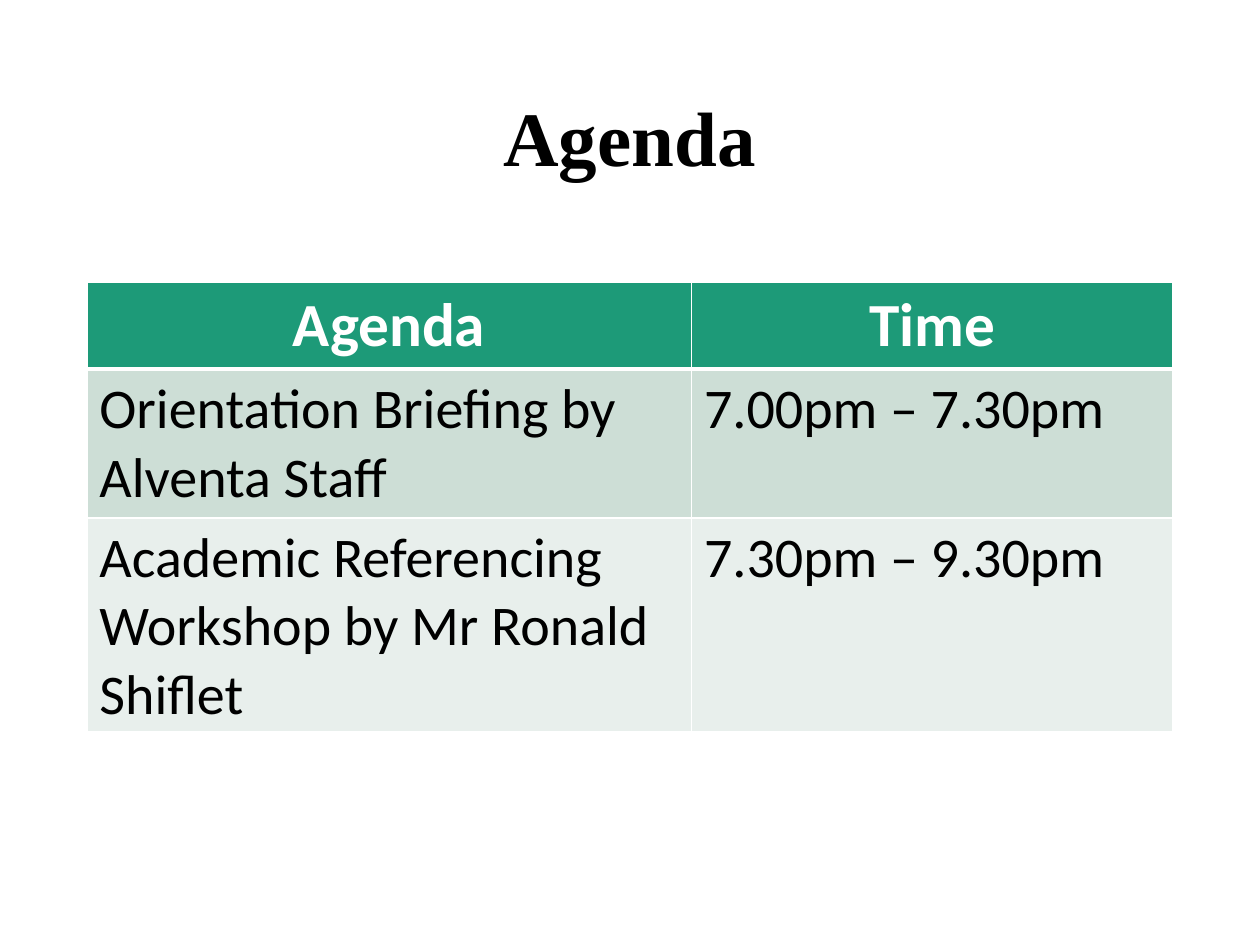
"""Build an agenda slide with a title and a timetable."""
from dataclasses import dataclass
from typing import Any

from lxml.etree import SubElement as Sub
from pptx import Presentation
from pptx.dml.color import RGBColor
from pptx.enum.text import MSO_ANCHOR as Anchor, PP_ALIGN as Align
from pptx.oxml.ns import qn
from pptx.util import Cm, Pt

BLACK = RGBColor(0x00, 0x00, 0x00)
WHITE = RGBColor(0xFF, 0xFF, 0xFF)
GREEN = RGBColor(0x1D, 0x9A, 0x78)
SAGE = RGBColor(0xCD, 0xDE, 0xD6)
MIST = RGBColor(0xE8, 0xEF, 0xEC)

TITLE = {"name": "Times New Roman", "size": Pt(44), "bold": True}
HEAD = {"name": "Calibri", "size": Pt(35), "bold": True}
BODY = {"name": "Calibri", "size": Pt(32), "bold": False}

LEFT, WIDTH = Cm(1.75), Cm(21.89)
COLS = (Cm(12.19), Cm(9.7))


@dataclass(frozen=True)
class Row:
    """One line of the timetable."""
    texts: tuple[str, str]
    height: Cm
    fill: RGBColor
    font: dict[str, Any]
    color: RGBColor = BLACK
    align: Align = Align.LEFT
    base: float = 1


ROWS = (
    Row(("Agenda", "Time"), Cm(1.75), GREEN, HEAD, WHITE, Align.CENTER, 3),
    Row(("Orientation Briefing by Alventa Staff", "7.00pm – 7.30pm"),
        Cm(3), SAGE, BODY),
    Row(("Academic Referencing Workshop by Mr Ronald Shiflet",
         "7.30pm – 9.30pm"), Cm(4.3), MIST, BODY),
)


def write(frame: Any, text: str, style: dict[str, Any], color: RGBColor,
          align: Align) -> Any:
    """Fill a text frame and return its paragraph."""
    para = frame.paragraphs[0]
    para.alignment = align
    run = para.add_run()
    run.text = text
    for key, value in style.items():
        setattr(run.font, key, value)
    run.font.color.rgb = color
    return para


def edge(cell: Any, top: float, base: float) -> None:
    """Draw the white borders of a cell."""
    props = cell._tc.get_or_add_tcPr()
    for side, width in {"L": 1, "R": 1, "T": top, "B": base}.items():
        line = Sub(props, qn(f"a:ln{side}"), w=str(Pt(width)))
        Sub(Sub(line, qn("a:solidFill")), qn("a:srgbClr"), val=str(WHITE))


def add_title(slide: Any) -> None:
    """Add the slide title."""
    frame = slide.shapes.add_textbox(LEFT, Cm(1.02), WIDTH, Cm(3.68)).text_frame
    frame.word_wrap = True
    frame.vertical_anchor = Anchor.MIDDLE
    para = write(frame, "Agenda", TITLE, BLACK, Align.CENTER)
    para.line_spacing = 0.9


def add_times(slide: Any) -> None:
    """Add the timetable."""
    total = sum(row.height for row in ROWS)
    table = slide.shapes.add_table(len(ROWS), len(COLS), LEFT, Cm(5.69),
                                   WIDTH, total).table
    for col, width in zip(table.columns, COLS):
        col.width = width
    top = 1
    for line, row in zip(table.rows, ROWS):
        line.height = row.height
        for cell, text in zip(line.cells, row.texts):
            edge(cell, top, row.base)
            cell.fill.solid()
            cell.fill.fore_color.rgb = row.fill
            write(cell.text_frame, text, row.font, row.color, row.align)
        top = row.base


def main() -> None:
    """Create and save the deck."""
    deck = Presentation()
    deck.slide_width, deck.slide_height = Cm(25.4), Cm(19.05)
    slide = deck.slides.add_slide(deck.slide_layouts[6])
    add_title(slide)
    add_times(slide)
    deck.save("out.pptx")


if __name__ == "__main__":
    main()
